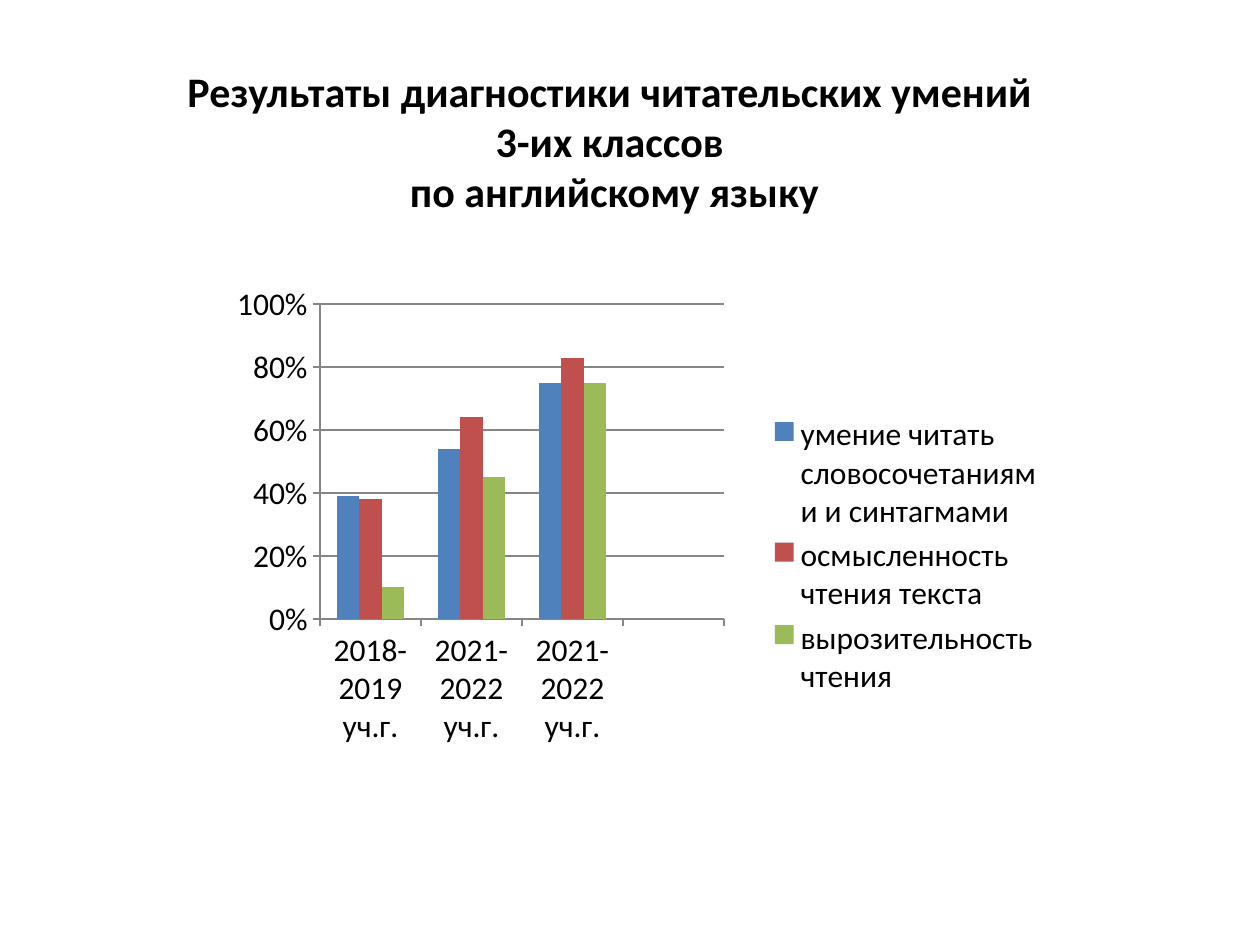
from lxml import etree
from pptx import Presentation
from pptx.chart.data import CategoryChartData
from pptx.dml.color import RGBColor
from pptx.enum.chart import XL_CHART_TYPE, XL_LEGEND_POSITION, XL_TICK_MARK
from pptx.enum.text import PP_ALIGN
from pptx.oxml import parse_xml
from pptx.oxml.ns import nsdecls
from pptx.util import Emu, Pt

BLACK = RGBColor(0, 0, 0)
GRAY = RGBColor(0x86, 0x86, 0x86)
BLUE = RGBColor(0x4F, 0x81, 0xBD)
RED = RGBColor(0xC0, 0x50, 0x4D)
GREEN = RGBColor(0x9B, 0xBB, 0x59)
FONT = "Calibri"

# Content
TITLE = [
    "Результаты диагностики читательских умений ",
    "3-их классов ",
    "по английскому языку",
]
YEARS = ["2018-2019 уч.г.", "2021-2022 уч.г.", "2021-2022 уч.г.", ""]
SKILLS = [
    ("умение читать словосочетаниями и синтагмами", BLUE, (0.39, 0.54, 0.75, None)),
    ("осмысленность чтения текста", RED, (0.38, 0.64, 0.83, None)),
    ("вырозительность чтения", GREEN, (0.1, 0.45, 0.75, None)),
]

# Places in px: left, top, width, height
PX_PER_INCH = 126
SLIDE_SIZE = (1260, 945)
TITLE_BOX = (147, 59, 935, 165)
CHART_BOX = (217, 276, 840, 559)
PLOT_BOX = (320, 304, 404, 315)


def px(length):
    return Emu(round(length * 914400 / PX_PER_INCH))


def set_font(font, size, bold=False):
    font.name, font.size, font.bold = FONT, Pt(size), bold
    font.color.rgb = BLACK


def add_text(slide, lines, box, size, bold=False, align=PP_ALIGN.LEFT):
    frame = slide.shapes.add_textbox(*map(px, box)).text_frame
    frame.word_wrap = True
    frame.text = "\n".join(lines)
    for paragraph in frame.paragraphs:
        paragraph.alignment = align
        set_font(paragraph.runs[0].font, size, bold)


def place_plot(chart):
    """Fix the inner plot area as fractions of the chart frame."""
    left, top, width, height = CHART_BOX
    x, y, w, h = PLOT_BOX
    fractions = {"x": (x - left) / width, "y": (y - top) / height,
                 "w": w / width, "h": h / height}
    settings = [("layoutTarget", "inner"), ("xMode", "edge"), ("yMode", "edge")]
    settings += [(key, f"{value:.4f}") for key, value in fractions.items()]
    items = "".join(f'<c:{key} val="{value}"/>' for key, value in settings)
    layout = parse_xml(f'<c:layout {nsdecls("c")}><c:manualLayout>{items}'
                       "</c:manualLayout></c:layout>")
    plot_area = chart.plots[0]._element.getparent()
    for old in plot_area.findall(etree.QName(layout).text):
        plot_area.remove(old)
    plot_area.insert(0, layout)


def add_skills_chart(slide):
    data = CategoryChartData(number_format="0%")
    data.categories = YEARS
    for name, _, values in SKILLS:
        data.add_series(name, values)
    chart = slide.shapes.add_chart(
        XL_CHART_TYPE.COLUMN_CLUSTERED, *map(px, CHART_BOX), data).chart
    chart.has_title = False
    set_font(chart.font, 18)

    # Columns
    columns = chart.plots[0]
    columns.vary_by_categories = False
    columns.gap_width, columns.overlap = 150, 0
    for series, (_, color, _) in zip(columns.series, SKILLS):
        series.format.fill.solid()
        series.format.fill.fore_color.rgb = color

    # Axes and gridlines
    percent = chart.value_axis
    percent.minimum_scale, percent.maximum_scale = 0, 1
    percent.major_unit = 0.2
    percent.has_major_gridlines = True
    percent.tick_labels.number_format = "0%"
    percent.tick_labels.number_format_is_linked = False
    for axis in (chart.category_axis, percent):
        axis.major_tick_mark = XL_TICK_MARK.OUTSIDE
    for part in (chart.category_axis, percent, percent.major_gridlines):
        part.format.line.color.rgb = GRAY
        part.format.line.width = Pt(0.75)

    # Legend
    chart.has_legend = True
    chart.legend.position = XL_LEGEND_POSITION.RIGHT
    chart.legend.include_in_layout = False
    set_font(chart.legend.font, 18)
    place_plot(chart)


def main():
    deck = Presentation()
    deck.slide_width, deck.slide_height = map(px, SLIDE_SIZE)
    slide = deck.slides.add_slide(deck.slide_layouts[6])
    add_skills_chart(slide)
    add_text(slide, TITLE, TITLE_BOX, size=24, bold=True, align=PP_ALIGN.CENTER)
    deck.save("out.pptx")


if __name__ == "__main__":
    main()
